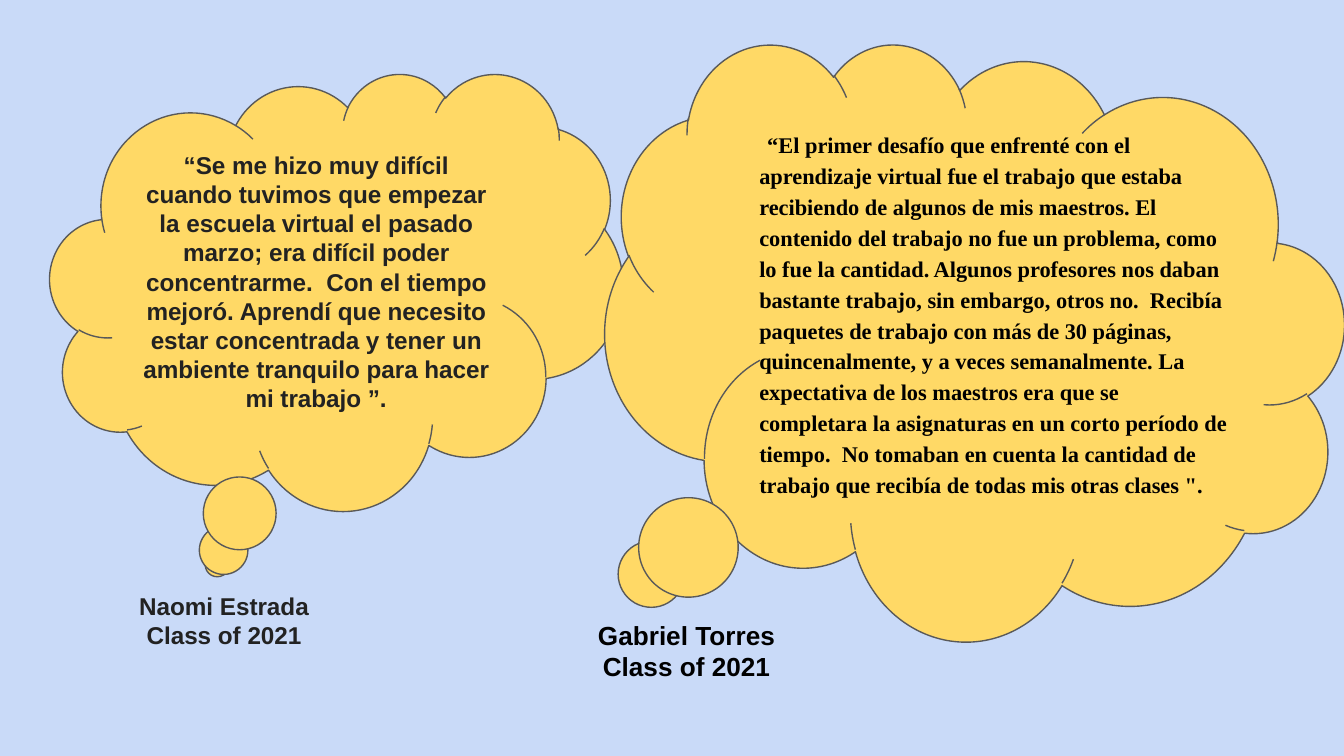
"""Build a slide with two student quotes in thought clouds."""
from pptx import Presentation
from pptx import util as u
from pptx.dml.color import RGBColor
from pptx.enum import shapes, text

SCALE = 914400 / 134.4
THEME = {
    "sky": "C9DAF8", "cloud": "FFD966", "outline": "595959",
    "soft": {"name": "Arial", "size": 13, "color": "222222"},
    "serif": {"name": "Times New Roman", "size": 12, "color": "000000"},
    "strong": {"name": "Arial", "size": 14, "color": "000000"},
}
CENTER, LEFT = text.PP_ALIGN.CENTER, text.PP_ALIGN.LEFT

CLOUDS = [
    {"at": (50, 73, 573, 437), "tail": (-0.208, 0.625), "flip": False,
     "insets": (13, 13, 13, 13), "style": "soft",
     "format": {"alignment": CENTER}, "indent": 0,
     "lines": ["“Se me hizo muy difícil cuando tuvimos que empezar la escuela virtual "
               "el pasado marzo; era difícil poder concentrarme.  Con el tiempo mejoró. "
               "Aprendí que necesito estar concentrada y tener un ambiente tranquilo "
               "para hacer mi trabajo ”."]},
    {"at": (605, 43, 739, 597), "tail": (0.451, 0.402), "flip": True,
     "insets": (0, 13, 13, 43), "style": "serif",
     "format": {"alignment": LEFT, "line_spacing": 1.15}, "indent": 8,
     "lines": ["“El primer desafío que enfrenté con el aprendizaje virtual fue el trabajo "
               "que estaba recibiendo de algunos de mis maestros. El contenido del trabajo "
               "no fue un problema, como lo fue la cantidad. Algunos profesores nos daban "
               "bastante trabajo, sin embargo, otros no.  Recibía paquetes de trabajo con "
               "más de 30 páginas, quincenalmente, y a veces semanalmente. La expectativa "
               "de los maestros era que se completara la asignaturas en un corto período de "
               "tiempo.  No tomaban en cuenta la cantidad de trabajo que recibía de todas "
               "mis otras clases \"."]},
]
LABELS = [
    {"at": (117, 578, 214, 97), "style": "soft", "lines": ["Naomi Estrada", "Class of 2021"]},
    {"at": (567, 606, 239, 121), "style": "strong", "lines": ["Gabriel Torres", "Class of 2021"]},
]


def px(length):
    return u.Emu(round(length * SCALE))


def paint(fill, color):
    fill.solid()
    fill.fore_color.rgb = RGBColor.from_string(color)


def write(box, lines, style, insets=(13, 13, 13, 13), anchor=text.MSO_ANCHOR.TOP,
          format=None, indent=0):
    frame = box.text_frame
    frame.word_wrap = True
    frame.vertical_anchor = anchor
    for side, inset in zip(("left", "top", "right", "bottom"), insets):
        setattr(frame, f"margin_{side}", px(inset))
    look = THEME[style]
    for index, line in enumerate(lines):
        para = frame.paragraphs[0] if index == 0 else frame.add_paragraph()
        for name, value in (format or {"alignment": CENTER}).items():
            setattr(para, name, value)
        if indent:
            para._p.get_or_add_pPr().set("indent", str(px(indent)))
        span = para.add_run()
        span.text = line
        for name, value in {"name": look["name"], "size": u.Pt(look["size"]), "bold": True}.items():
            setattr(span.font, name, value)
        span.font.color.rgb = RGBColor.from_string(look["color"])


def add_cloud(page, cloud):
    box = page.shapes.add_shape(shapes.MSO_SHAPE.CLOUD_CALLOUT, *map(px, cloud["at"]))
    box.shadow.inherit = False
    for index, value in enumerate(cloud["tail"]):
        box.adjustments[index] = value
    if cloud["flip"]:
        box._element.spPr.xfrm.set("flipH", "1")
    paint(box.fill, THEME["cloud"])
    paint(box.line.fill, THEME["outline"])
    box.line.width = u.Pt(0.75)
    write(box, cloud["lines"], cloud["style"], cloud["insets"],
          text.MSO_ANCHOR.MIDDLE, cloud["format"], cloud["indent"])


def main():
    deck = Presentation()
    deck.slide_width, deck.slide_height = px(1344), px(756)
    page = deck.slides.add_slide(deck.slide_layouts[6])
    paint(page.background.fill, THEME["sky"])
    for cloud in CLOUDS:
        add_cloud(page, cloud)
    for label in LABELS:
        box = page.shapes.add_textbox(*map(px, label["at"]))
        write(box, label["lines"], label["style"])
    deck.save("out.pptx")


if __name__ == "__main__":
    main()
